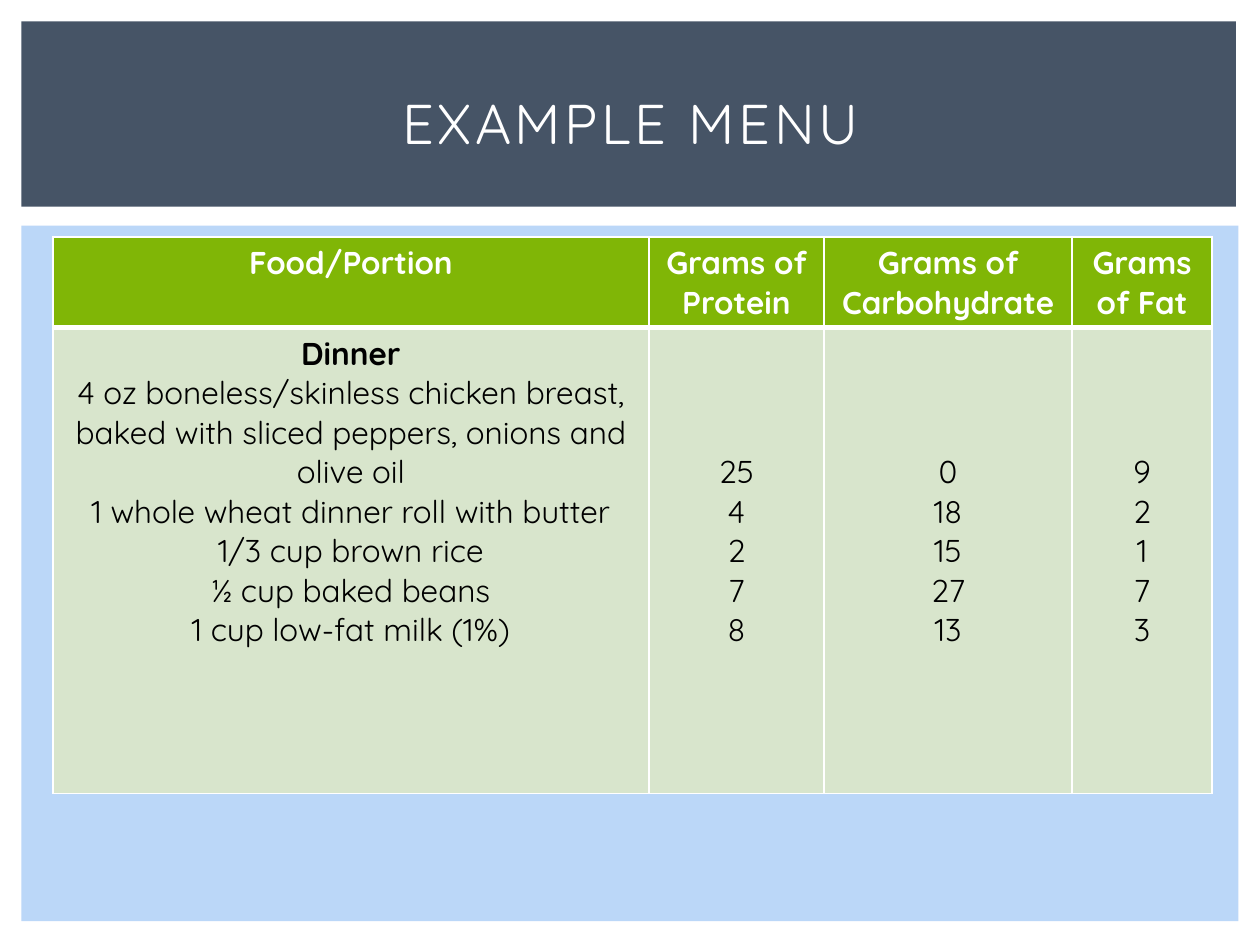
from lxml.etree import SubElement
from pptx import Presentation
from pptx.dml.color import RGBColor
from pptx.enum.shapes import MSO_SHAPE
from pptx.enum.text import MSO_ANCHOR, PP_ALIGN
from pptx.oxml.ns import qn
from pptx.util import Inches, Pt

COLORS = {"white": "FFFFFF", "black": "000000", "sky": "BBD7F8",
          "slate": "465466", "green": "80B606", "pale": "D8E5CC"}
GRID_COLUMNS, GRID_ROWS = 100, 75
LINE_ROWS = 3.13  # height of one 18 pt line, in grid rows

HEADERS = ["Food/Portion", "Grams of Protein", "Grams of Carbohydrate", "Grams of Fat"]
COLUMN_WIDTHS = [47.3, 13.9, 19.7, 11.1]
MEAL = "Dinner"
FOODS = [
    ("4 oz boneless/skinless chicken breast, baked with sliced peppers, "
     "onions and olive oil", 25, 0, 9),
    ("1 whole wheat dinner roll with butter", 4, 18, 2),
    ("1/3 cup brown rice", 2, 15, 1),
    ("½ cup baked beans", 7, 27, 7),
    ("1 cup low-fat milk (1%)", 8, 13, 3),
]


class MenuSlide:
    font = "Quicksand"

    def __init__(self, deck):
        self.slide = deck.slides.add_slide(deck.slide_layouts[6])
        self.unit_x = deck.slide_width / GRID_COLUMNS
        self.unit_y = deck.slide_height / GRID_ROWS

    def x(self, columns):
        return round(columns * self.unit_x)

    def y(self, rows):
        return round(rows * self.unit_y)

    def box(self, left, top, width, height):
        return self.x(left), self.y(top), self.x(width), self.y(height)

    def color(self, name):
        return RGBColor.from_string(COLORS[name])

    def panel(self, color, *place):
        panel = self.slide.shapes.add_shape(MSO_SHAPE.RECTANGLE, *self.box(*place))
        panel.shadow.inherit = False
        panel.fill.solid()
        panel.fill.fore_color.rgb = self.color(color)
        panel.line.fill.background()

    def set_lines(self, frame, lines, color, size=18, bold_lines=0):
        frame.word_wrap = True
        for index, line in enumerate(lines):
            paragraph = frame.paragraphs[0] if index == 0 else frame.add_paragraph()
            paragraph.alignment = PP_ALIGN.CENTER
            run = paragraph.add_run()
            run.text = str(line)
            style = {"name": self.font, "size": Pt(size), "bold": index < bold_lines}
            for key, value in style.items():
                setattr(run.font, key, value)
            run.font.color.rgb = self.color(color)

    def title(self, text, *place):
        frame = self.slide.shapes.add_textbox(*self.box(*place)).text_frame
        frame.vertical_anchor = MSO_ANCHOR.MIDDLE
        self.set_lines(frame, [text], "white", size=32)
        frame.paragraphs[0].runs[0].font._element.set("spc", "200")

    def table(self, left, top, widths, heights):
        place = self.box(left, top, sum(widths), sum(heights))
        table = self.slide.shapes.add_table(len(heights), len(widths), *place).table
        table.horz_banding = False
        for column, width in zip(table.columns, widths):
            column.width = self.x(width)
        for row, height in zip(table.rows, heights):
            row.height = self.y(height)
        return table

    def cell(self, cell, lines, fill, color, bold_lines=0, skipped_lines=0, **borders):
        cell.fill.solid()
        cell.fill.fore_color.rgb = self.color(fill)
        cell.margin_top = self.y(0.5 + skipped_lines * LINE_ROWS)
        self.set_lines(cell.text_frame, lines, color, bold_lines=bold_lines)
        self.borders(cell, **borders)

    def borders(self, cell, **thick):
        properties = cell._tc.get_or_add_tcPr()
        for index, side in enumerate("LRTB"):
            line = SubElement(properties, qn(f"a:ln{side}"), w=str(Pt(thick.get(side, 1))))
            fill = SubElement(line, qn("a:solidFill"))
            SubElement(fill, qn("a:srgbClr"), val=COLORS["white"])
            properties.insert(index, line)


def main():
    deck = Presentation()
    deck.slide_width, deck.slide_height = Inches(10), Inches(7.5)
    menu = MenuSlide(deck)

    # Background panels and title
    menu.panel("sky", 1.7, 17.9, 96.6, 55.2)
    menu.panel("slate", 1.7, 1.7, 96.4, 14.7)
    menu.title("EXAMPLE MENU", 4.2, 3.9, 91.7, 11.5)

    # Nutrition table
    nutrition = menu.table(4.2, 18.8, COLUMN_WIDTHS, [7.2, 37])
    names, *grams = zip(*FOODS)
    for column, header in enumerate(HEADERS):
        menu.cell(nutrition.cell(0, column), [header], "green", "white", bold_lines=1, B=3)
    menu.cell(nutrition.cell(1, 0), [MEAL, *names], "pale", "black", bold_lines=1, T=3)

    # Amounts start level with the last line of the first food
    for column, amounts in enumerate(grams, start=1):
        menu.cell(nutrition.cell(1, column), amounts, "pale", "black", skipped_lines=3, T=3)

    deck.save("out.pptx")


if __name__ == "__main__":
    main()
